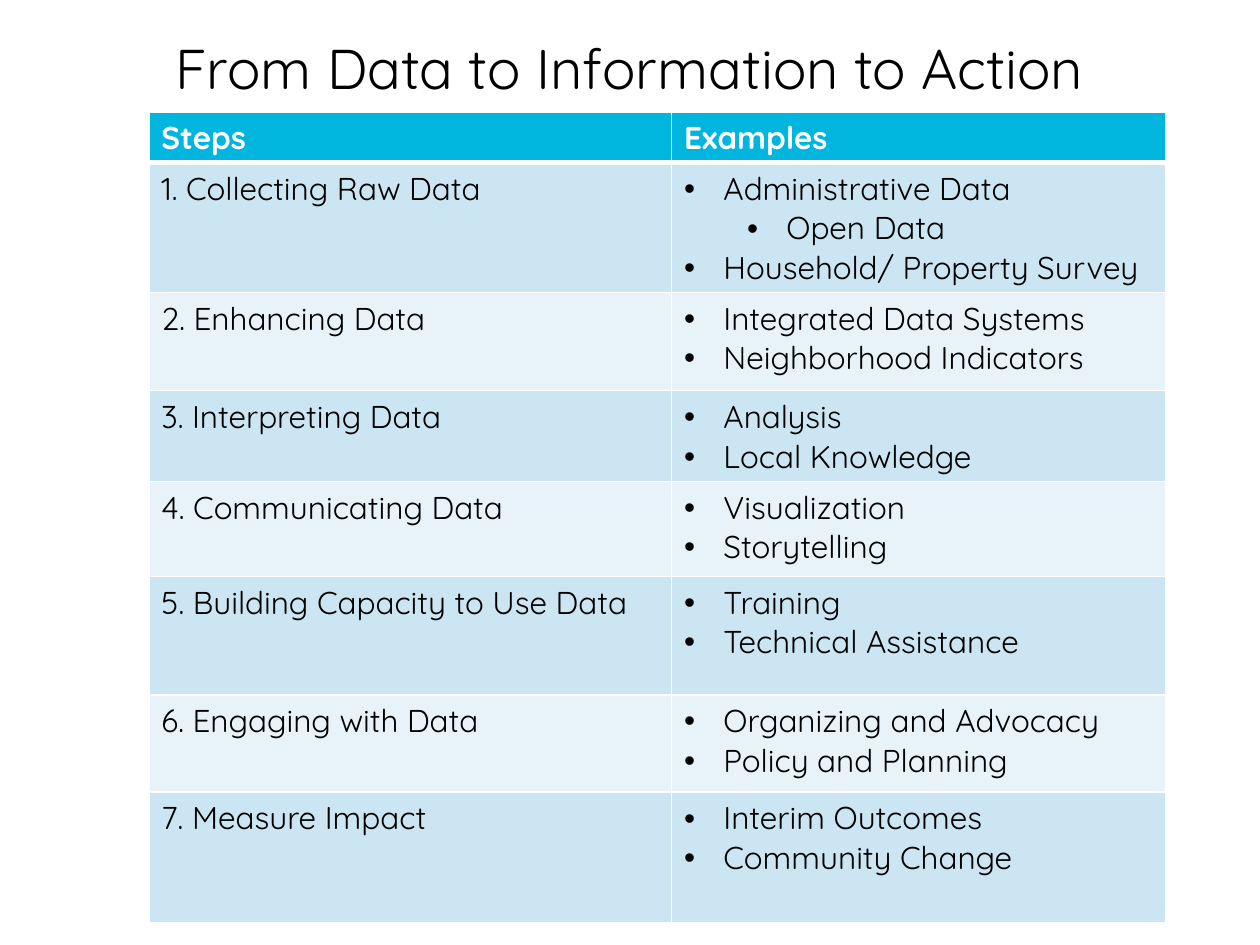
from lxml import etree
from pptx import Presentation
from pptx.dml.color import RGBColor
from pptx.enum.text import MSO_ANCHOR, PP_ALIGN
from pptx.oxml.ns import qn
from pptx.util import Cm, Pt

CENTER = PP_ALIGN.CENTER
TOP = MSO_ANCHOR.TOP
FONT = "Quicksand"
BLACK, WHITE = "000000", "FFFFFF"
HEADER_FILL = "00B6DE"
BAND_FILLS = ("CCE5F2", "E7F3F9")
COLUMN_WIDTHS = (10.54, 9.96)
HEADER_HEIGHT = 0.99
HEADINGS = ("Steps", "Examples")
STEPS = [
    (2.62, "1. Collecting Raw Data",
     [("Administrative Data", 0), ("Open Data", 1), ("Household/ Property Survey", 0)]),
    (1.98, "2. Enhancing Data",
     [("Integrated Data Systems", 0), ("Neighborhood Indicators", 0)]),
    (1.83, "3. Interpreting Data", [("Analysis", 0), ("Local Knowledge", 0)]),
    (1.91, "4. Communicating Data", [("Visualization", 0), ("Storytelling", 0)]),
    (2.39, "5. Building Capacity to Use Data",
     [("Training", 0), ("Technical Assistance", 0)]),
    (1.96, "6. Engaging with Data",
     [("Organizing and Advocacy", 0), ("Policy and Planning", 0)]),
    (2.64, "7. Measure Impact", [("Interim Outcomes", 0), ("Community Change", 0)]),
]


def rgb(color):
    """Turn a hex string into a colour."""
    return RGBColor.from_string(color)


def format_runs(p, size, color, bold=False):
    """Set the font of every run in a paragraph."""
    for r in p.runs:
        r.font.name = FONT
        r.font.size = Pt(size)
        r.font.bold = bold
        r.font.color.rgb = rgb(color)


def add_bullet(p, level):
    """Give a paragraph a hanging bullet at its level."""
    p.level = level
    pPr = p._p.get_or_add_pPr()
    pPr.set("marL", str(Cm(0.79 + 1.27 * level)))
    pPr.set("indent", str(-Cm(0.79)))
    etree.SubElement(pPr, qn("a:buFont"), typeface="Arial")
    etree.SubElement(pPr, qn("a:buChar"), char="•")


def set_borders(cell, bottom):
    """Draw white lines around a cell, ahead of its fill."""
    tcPr = cell._tc.get_or_add_tcPr()
    widths = {"a:lnL": 1, "a:lnR": 1, "a:lnT": 1, "a:lnB": bottom}
    for i, (tag, width) in enumerate(widths.items()):
        ln = etree.Element(qn(tag), w=str(Pt(width)))
        fill = etree.SubElement(ln, qn("a:solidFill"))
        etree.SubElement(fill, qn("a:srgbClr"), val=WHITE)
        tcPr.insert(i, ln)


def fill_cell(cell, lines, fill, color=BLACK, bold=False, bottom=1):
    """Write (text, level) lines in a cell; a level of None has no bullet."""
    cell.fill.solid()
    cell.fill.fore_color.rgb = rgb(fill)
    set_borders(cell, bottom)
    tf = cell.text_frame
    tf.text = "\n".join(text for text, level in lines)
    for p, (text, level) in zip(tf.paragraphs, lines):
        if level is not None:
            add_bullet(p, level)
        format_runs(p, 18, color, bold)


def add_title(s, text):
    """Add the centred slide title."""
    tf = s.shapes.add_textbox(Cm(0), Cm(0.56), Cm(25.4), Cm(2.95)).text_frame
    tf.word_wrap = True
    tf.vertical_anchor = TOP
    tf.text = text
    p = tf.paragraphs[0]
    p.alignment = CENTER
    format_runs(p, 32, BLACK)


def add_steps_table(s):
    """Add the table of steps and examples."""
    heights = [HEADER_HEIGHT] + [height for height, step, examples in STEPS]
    table = s.shapes.add_table(
        len(heights), len(COLUMN_WIDTHS), Cm(3), Cm(2.26),
        Cm(sum(COLUMN_WIDTHS)), Cm(sum(heights))).table
    for column, width in zip(table.columns, COLUMN_WIDTHS):
        column.width = Cm(width)
    for row, height in zip(table.rows, heights):
        row.height = Cm(height)
    for i, heading in enumerate(HEADINGS):
        fill_cell(table.cell(0, i), [(heading, None)], HEADER_FILL, WHITE, True, 3)
    for i, (height, step, examples) in enumerate(STEPS):
        fill = BAND_FILLS[i % 2]
        fill_cell(table.cell(i + 1, 0), [(step, None)], fill)
        fill_cell(table.cell(i + 1, 1), examples, fill)


def main():
    """Build and save the slide."""
    prs = Presentation()
    prs.slide_width, prs.slide_height = Cm(25.4), Cm(19.05)
    s = prs.slides.add_slide(prs.slide_layouts[6])
    add_title(s, "From Data to Information to Action")
    add_steps_table(s)
    prs.save("out.pptx")


if __name__ == "__main__":
    main()
